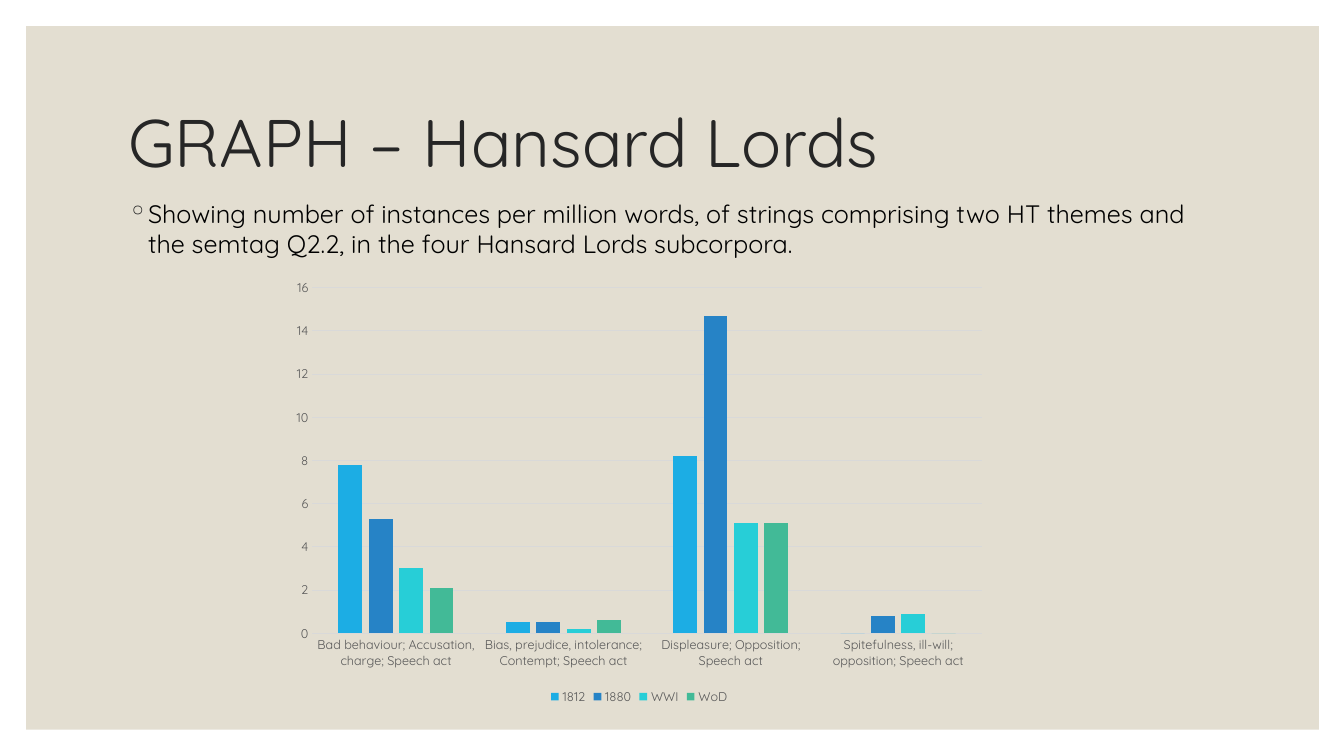
from lxml import etree
from pptx import Presentation
from pptx.chart.data import CategoryChartData
from pptx.dml.color import RGBColor
from pptx.enum import chart as ch, shapes, text
from pptx.oxml import ns
from pptx.util import Inches, Pt


def rgb(value):
    return RGBColor.from_string(value)


class Deck:
    FONT = "Quicksand"
    PANEL, INK, BLACK, GRAY, RULE = "E3DED1", "262626", "000000", "595959", "D9D9D9"

    def __init__(self, width, height):
        self.prs = Presentation()
        self.prs.slide_width, self.prs.slide_height = Inches(width), Inches(height)
        self.s = self.prs.slides.add_slide(self.prs.slide_layouts[5])

    def style(self, font, size, color):
        font.name, font.size, font.bold = self.FONT, Pt(size), False
        font.color.rgb = rgb(color)

    def panel(self, *box):
        """Draw the plain backdrop behind everything else."""
        sp = self.s.shapes.add_shape(shapes.MSO_SHAPE.RECTANGLE, *map(Inches, box))
        sp.shadow.inherit = False
        sp.fill.solid()
        sp.fill.fore_color.rgb = rgb(self.PANEL)
        sp.line.fill.background()
        self.s.shapes._spTree.insert(2, sp._element)

    def title(self, words, *box):
        sp = self.s.shapes.title
        sp.left, sp.top, sp.width, sp.height = map(Inches, box)
        tf = sp.text_frame
        tf.text = words
        tf.word_wrap, tf.auto_size = True, text.MSO_AUTO_SIZE.NONE
        tf.vertical_anchor = text.MSO_ANCHOR.MIDDLE
        p = tf.paragraphs[0]
        p.alignment, p.line_spacing = text.PP_ALIGN.LEFT, 0.9
        self.style(p.font, 48, self.INK)

    def bullet(self, words, *box):
        tf = self.s.shapes.add_textbox(*map(Inches, box)).text_frame
        tf.word_wrap = True
        p = tf.paragraphs[0]
        p.text, p.space_before = words, Pt(9)
        self.style(p.font, 18, self.BLACK)
        pPr = p._p.get_or_add_pPr()
        pPr.set("marL", str(Inches(0.2)))
        pPr.set("indent", str(Inches(-0.2)))
        mark = etree.Element(ns.qn("a:buClr"))
        etree.SubElement(mark, ns.qn("a:srgbClr"), val=self.INK)
        char = etree.Element(ns.qn("a:buChar"), char="◦")
        at = pPr.index(pPr.find(ns.qn("a:spcBef"))) + 1
        pPr[at:at] = [mark, char]

    def columns(self, categories, series, *box):
        """Add a clustered column chart; series maps name to (colour, values)."""
        data = CategoryChartData()
        data.categories = categories
        for name, (_, values) in series.items():
            data.add_series(name, values)
        chart = self.s.shapes.add_chart(
            ch.XL_CHART_TYPE.COLUMN_CLUSTERED, *map(Inches, box), data).chart
        self.style(chart.font, 10, self.BLACK)
        chart.has_title = False
        chart.has_legend = True
        chart.legend.position = ch.XL_LEGEND_POSITION.BOTTOM
        chart.legend.include_in_layout = False
        self.style(chart.legend.font, 9, self.GRAY)

        plot = chart.plots[0]
        plot.gap_width, plot.overlap, plot.vary_by_categories = 219, -27, False
        for bars, (color, _) in zip(plot.series, series.values()):
            bars.format.fill.solid()
            bars.format.fill.fore_color.rgb = rgb(color)
            bars.invert_if_negative = False

        for axis in (chart.category_axis, chart.value_axis):
            axis.major_tick_mark = axis.minor_tick_mark = ch.XL_TICK_MARK.NONE
            self.style(axis.tick_labels.font, 9, self.GRAY)
        value = chart.value_axis
        value.minimum_scale, value.maximum_scale, value.major_unit = 0, 16, 2
        value.format.line.fill.background()
        for line in (chart.category_axis.format.line, value.major_gridlines.format.line):
            line.color.rgb, line.width = rgb(self.RULE), Pt(0.75)


def main():
    deck = Deck(13.33, 7.5)
    deck.panel(0.26, 0.26, 12.82, 6.98)
    deck.title("GRAPH – Hansard Lords", 1.17, 0.7, 11, 1.5)
    deck.bullet("Showing number of instances per million words, of strings comprising "
                "two HT themes and the semtag Q2.2, in the four Hansard Lords subcorpora.",
                1.17, 1.92, 11, 4.68)
    themes = ["Bad behaviour; Accusation, charge; Speech act",
              "Bias, prejudice, intolerance; Contempt; Speech act",
              "Displeasure; Opposition; Speech act",
              "Spitefulness, ill-will; opposition; Speech act"]
    subcorpora = {"1812": ("1CADE4", (7.8, 0.5, 8.2, 0)),
                  "1880": ("2683C6", (5.3, 0.5, 14.7, 0.8)),
                  "WWI": ("27CED7", (3, 0.2, 5.1, 0.9)),
                  "WoD": ("42BA97", (2.1, 0.6, 5.1, 0))}
    deck.columns(themes, subcorpora, 2.8, 2.69, 7.08, 4.34)
    deck.prs.save("out.pptx")


if __name__ == "__main__":
    main()
